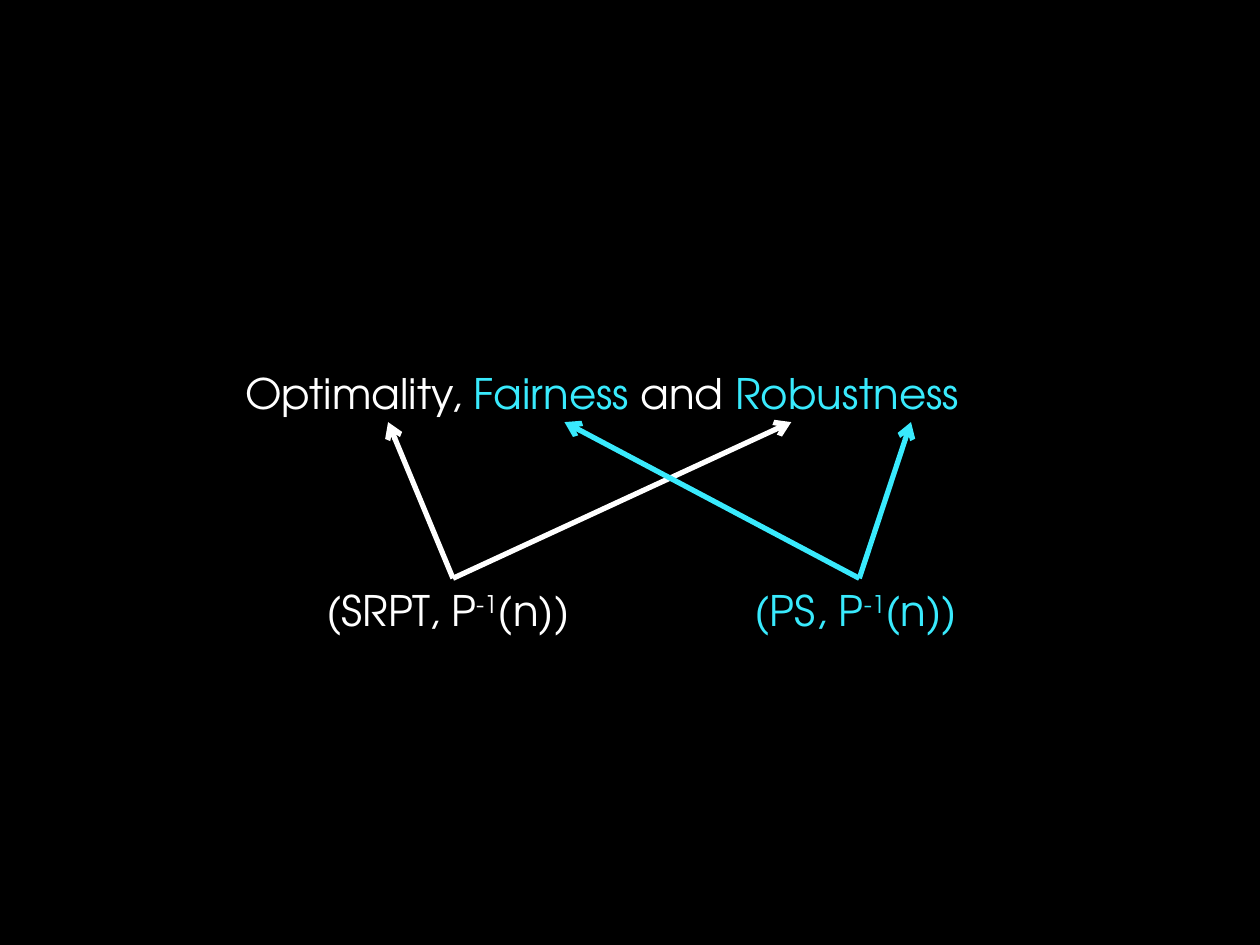
from lxml import etree
from pptx import Presentation
from pptx.dml.color import RGBColor
from pptx.enum.shapes import MSO_CONNECTOR
from pptx.oxml.ns import qn
from pptx.util import Inches, Pt

STRAIGHT = MSO_CONNECTOR.STRAIGHT
FONT = "TeX Gyre Adventor"
BLACK, WHITE, CYAN = "000000", "FFFFFF", "39EAFD"
ARROW_TOP = 3.35
POLICY_TOP = 4.59


def color(value):
    return RGBColor.from_string(value)


def add_text(slide, box, parts, wrap):
    shape = slide.shapes.add_textbox(*map(Inches, box))
    shape.text_frame.word_wrap = wrap
    paragraph = shape.text_frame.paragraphs[0]
    paragraph.font.name = FONT
    paragraph.font.size = Pt(24)
    for text, fill, baseline in parts:
        run = paragraph.add_run()
        run.text = text
        run.font.color.rgb = color(fill)
        if baseline:
            run._r.get_or_add_rPr().set("baseline", str(baseline * 1000))


def add_arrow(slide, start, end, fill):
    connector = slide.shapes.add_connector(
        STRAIGHT, *map(Inches, (*start, *end)))
    connector.line.color.rgb = color(fill)
    connector.line.width = Pt(3)
    line = connector.line._get_or_add_ln()
    etree.SubElement(line, qn("a:tailEnd"), type="arrow")
    etree.SubElement(connector._element.spPr, qn("a:effectLst"))


def add_goals(slide, box):
    add_text(slide, box, [
        ("Optimality, ", WHITE, 0),
        ("Fairness", CYAN, 0),
        (" and ", WHITE, 0),
        ("Robustness", CYAN, 0),
    ], True)


def add_policy(slide, box, name, fill, goal_centers):
    left, top, width, height = box
    add_text(slide, box, [
        (f"({name}, P", fill, 0),
        ("-1", fill, 30),
        ("(n))", fill, 0),
    ], False)
    start = (left + width / 2, top)
    for center in goal_centers:
        add_arrow(slide, start, (center, ARROW_TOP), fill)


def main():
    presentation = Presentation()
    presentation.slide_width = Inches(10)
    presentation.slide_height = Inches(7.5)
    slide = presentation.slides.add_slide(presentation.slide_layouts[6])
    slide.background.fill.solid()
    slide.background.fill.fore_color.rgb = color(BLACK)
    add_goals(slide, (1.85, 2.87, 7.65, 3.83))
    add_policy(slide, (2.49, POLICY_TOP, 2.21, 0.5), "SRPT", WHITE, (3.08, 6.28))
    add_policy(slide, (5.89, POLICY_TOP, 1.86, 0.5), "PS", CYAN, (7.23, 4.48))
    presentation.save("out.pptx")


if __name__ == "__main__":
    main()
